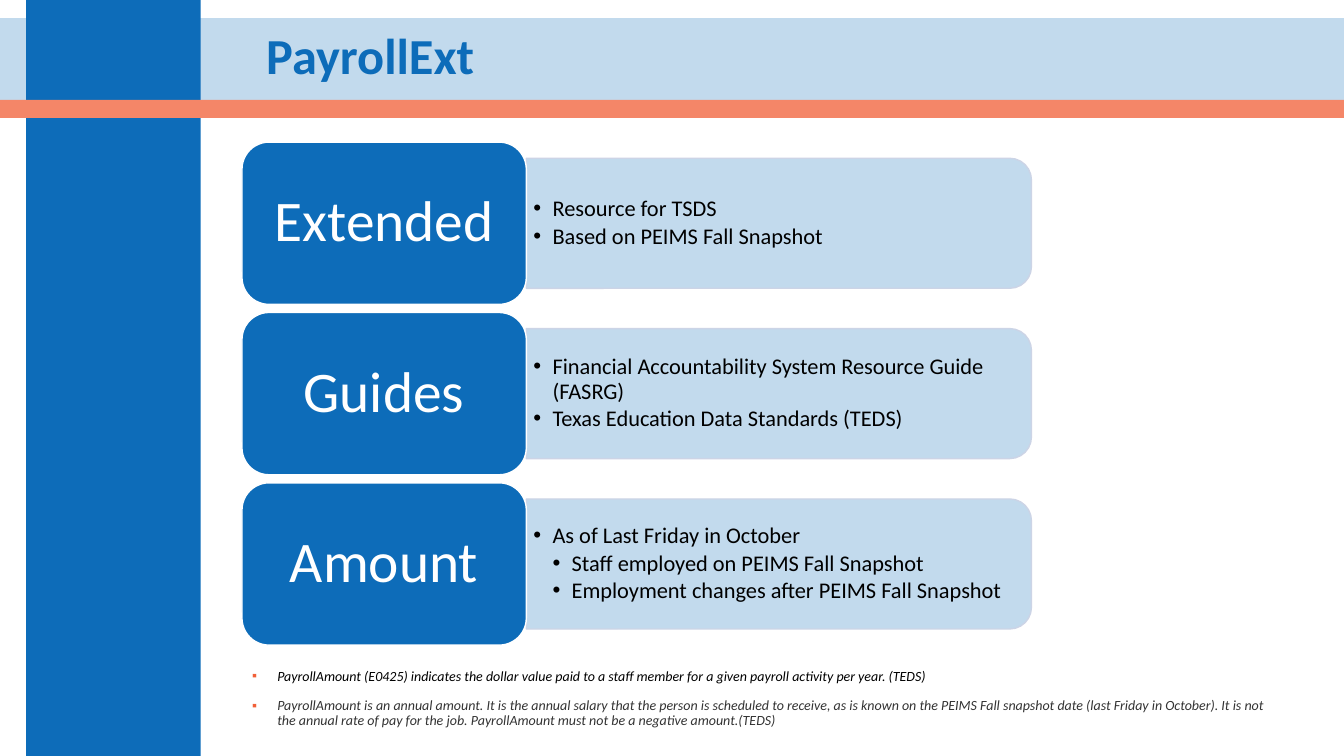
from dataclasses import dataclass
from typing import Any

from lxml.etree import SubElement
from pptx import Presentation
from pptx.dml.color import RGBColor
from pptx.enum.shapes import MSO_SHAPE
from pptx.enum.text import MSO_ANCHOR, MSO_AUTO_SIZE, PP_ALIGN
from pptx.oxml.ns import qn
from pptx.util import Inches, Pt

BLUE, PALE, CORAL, WHITE = "0D6CB9", "C2DAED", "F48668", "FFFFFF"
BLACK, GRAY, ORANGE, PALE_LINE = "000000", "333333", "F16038", "CCD4E6"
FONT = "Calibri"

FIRST_ROW_TOP, ROW_PITCH = 1.41, 1.69
LABEL_LEFT, LABEL_WIDTH, LABEL_HEIGHT = 2.4, 2.82, 1.61
PANEL_LENGTH, PANEL_HEIGHT = 5.01, 1.29
BULLET_STEP = 0.19


@dataclass(frozen=True)
class Bullet:
    text: str
    level: int = 1


@dataclass(frozen=True)
class Topic:
    label: str
    bullets: tuple[Bullet, ...]


@dataclass(frozen=True)
class Note:
    text: str
    color: str


TOPICS = (
    Topic("Extended", (
        Bullet("Resource for TSDS"),
        Bullet("Based on PEIMS Fall Snapshot"),
    )),
    Topic("Guides", (
        Bullet("Financial Accountability System Resource Guide (FASRG)"),
        Bullet("Texas Education Data Standards (TEDS)"),
    )),
    Topic("Amount", (
        Bullet("As of Last Friday in October"),
        Bullet("Staff employed on PEIMS Fall Snapshot", 2),
        Bullet("Employment changes after PEIMS Fall Snapshot", 2),
    )),
)

NOTES = (
    Note("PayrollAmount (E0425) indicates the dollar value paid to a staff member "
         "for a given payroll activity per year. (TEDS)", BLACK),
    Note("PayrollAmount is an annual amount. It is the annual salary that the person "
         "is scheduled to receive, as is known on the PEIMS Fall snapshot date (last "
         "Friday in October). It is not the annual rate of pay for the job. "
         "PayrollAmount must not be a negative amount.(TEDS)", GRAY),
)


def rgb(color: str) -> RGBColor:
    return RGBColor.from_string(color)


def apply(target: Any, values: dict[str, Any]) -> None:
    for name, value in values.items():
        setattr(target, name, value)


def place(item: Any, left: float, top: float, width: float, height: float) -> None:
    apply(item, {"left": Inches(left), "top": Inches(top),
                 "width": Inches(width), "height": Inches(height)})


def add_block(page: Any, kind: MSO_SHAPE, bounds: tuple[float, ...], fill: str,
              line: str | None = None) -> Any:
    block = page.shapes.add_shape(kind, *map(Inches, bounds))
    block.shadow.inherit = False
    block.fill.solid()
    block.fill.fore_color.rgb = rgb(fill)
    if line:
        block.line.color.rgb = rgb(line)
        block.line.width = Pt(1)
    else:
        block.line.fill.background()
    return block


def set_frame(frame: Any, anchor: MSO_ANCHOR, side: float, edge: float) -> None:
    apply(frame, {
        "word_wrap": True, "auto_size": MSO_AUTO_SIZE.NONE, "vertical_anchor": anchor,
        "margin_left": Inches(side), "margin_right": Inches(side),
        "margin_top": Inches(edge), "margin_bottom": Inches(edge),
    })


def write(para: Any, text: str, size: float, color: str, *, before: float = 0,
          after: float = 0, align: PP_ALIGN = PP_ALIGN.LEFT, **style: bool) -> None:
    apply(para, {"alignment": align, "line_spacing": 0.9,
                 "space_before": Pt(before), "space_after": Pt(after)})
    span = para.add_run()
    span.text = text
    apply(span.font, {"name": FONT, "size": Pt(size), **style})
    span.font.color.rgb = rgb(color)


def add_bullet(para: Any, mark: str, indent: float, hang: float,
               color: str | None = None) -> None:
    properties = para._p.get_or_add_pPr()
    properties.set("marL", str(Inches(indent)))
    properties.set("indent", str(-Inches(hang)))
    if color:
        SubElement(SubElement(properties, qn("a:buClr")), qn("a:srgbClr"), val=color)
    SubElement(properties, qn("a:buFont"), typeface="Arial")
    SubElement(properties, qn("a:buChar"), char=mark)


def paragraphs(frame: Any, count: int) -> list[Any]:
    return [frame.paragraphs[0], *(frame.add_paragraph() for _ in range(count - 1))]


def draw_background(page: Any) -> None:
    band = add_block(page, MSO_SHAPE.RECTANGLE, (0, 0.18, 13.33, 0.82), BLUE)
    color = band.fill._xPr.find(qn("a:solidFill")).find(qn("a:srgbClr"))
    SubElement(color, qn("a:alpha"), val="25000")
    add_block(page, MSO_SHAPE.RECTANGLE, (0.26, 0, 1.73, 7.5), BLUE)
    add_block(page, MSO_SHAPE.RECTANGLE, (0, 0.99, 13.33, 0.18), CORAL)


def draw_topic(page: Any, topic: Topic, top: float) -> None:
    panel_left = LABEL_LEFT + LABEL_WIDTH
    middle = top + LABEL_HEIGHT / 2
    panel = add_block(page, MSO_SHAPE.ROUND_2_SAME_RECTANGLE,
                      (panel_left + (PANEL_LENGTH - PANEL_HEIGHT) / 2,
                       middle - PANEL_LENGTH / 2, PANEL_HEIGHT, PANEL_LENGTH),
                      PALE, PALE_LINE)
    panel.rotation = 90

    box = page.shapes.add_textbox(Inches(panel_left), Inches(middle - 0.58),
                                  Inches(4.95), Inches(1.16))
    set_frame(box.text_frame, MSO_ANCHOR.MIDDLE, 0.07, 0.03)
    lines = paragraphs(box.text_frame, len(topic.bullets))
    for para, bullet in zip(lines, topic.bullets):
        para.level = bullet.level
        add_bullet(para, "•", BULLET_STEP * bullet.level, BULLET_STEP)
        write(para, bullet.text, 16, BLACK, after=2.4)

    label = add_block(page, MSO_SHAPE.ROUNDED_RECTANGLE,
                      (LABEL_LEFT, top, LABEL_WIDTH, LABEL_HEIGHT), BLUE, WHITE)
    set_frame(label.text_frame, MSO_ANCHOR.MIDDLE, 0.17, 0.09)
    write(label.text_frame.paragraphs[0], topic.label, 41, WHITE, align=PP_ALIGN.CENTER)


def fill_placeholders(page: Any) -> None:
    """Fill the title and notes, and bring both in front of the background."""
    title, body = page.shapes.title, page.placeholders[1]
    place(title, 2.54, 0.17, 10.4, 0.82)
    set_frame(title.text_frame, MSO_ANCHOR.MIDDLE, 0.1, 0.05)
    write(title.text_frame.paragraphs[0], "PayrollExt", 36, BLUE, bold=True)

    place(body, 2.4, 6.59, 10.38, 0.66)
    set_frame(body.text_frame, MSO_ANCHOR.TOP, 0.1, 0.05)
    lines = paragraphs(body.text_frame, len(NOTES))
    for index, (para, note) in enumerate(zip(lines, NOTES)):
        add_bullet(para, "▪", 0.25, 0.25, ORANGE)
        write(para, note.text, 10, note.color, before=10 if index else 0, italic=True)

    for holder in (title, body):
        holder.element.getparent().append(holder.element)


def main() -> None:
    deck = Presentation()
    apply(deck, {"slide_width": Inches(13.33), "slide_height": Inches(7.5)})
    page = deck.slides.add_slide(deck.slide_layouts[1])
    draw_background(page)
    fill_placeholders(page)
    for row, topic in enumerate(TOPICS):
        draw_topic(page, topic, FIRST_ROW_TOP + row * ROW_PITCH)
    deck.save("out.pptx")


if __name__ == "__main__":
    main()
